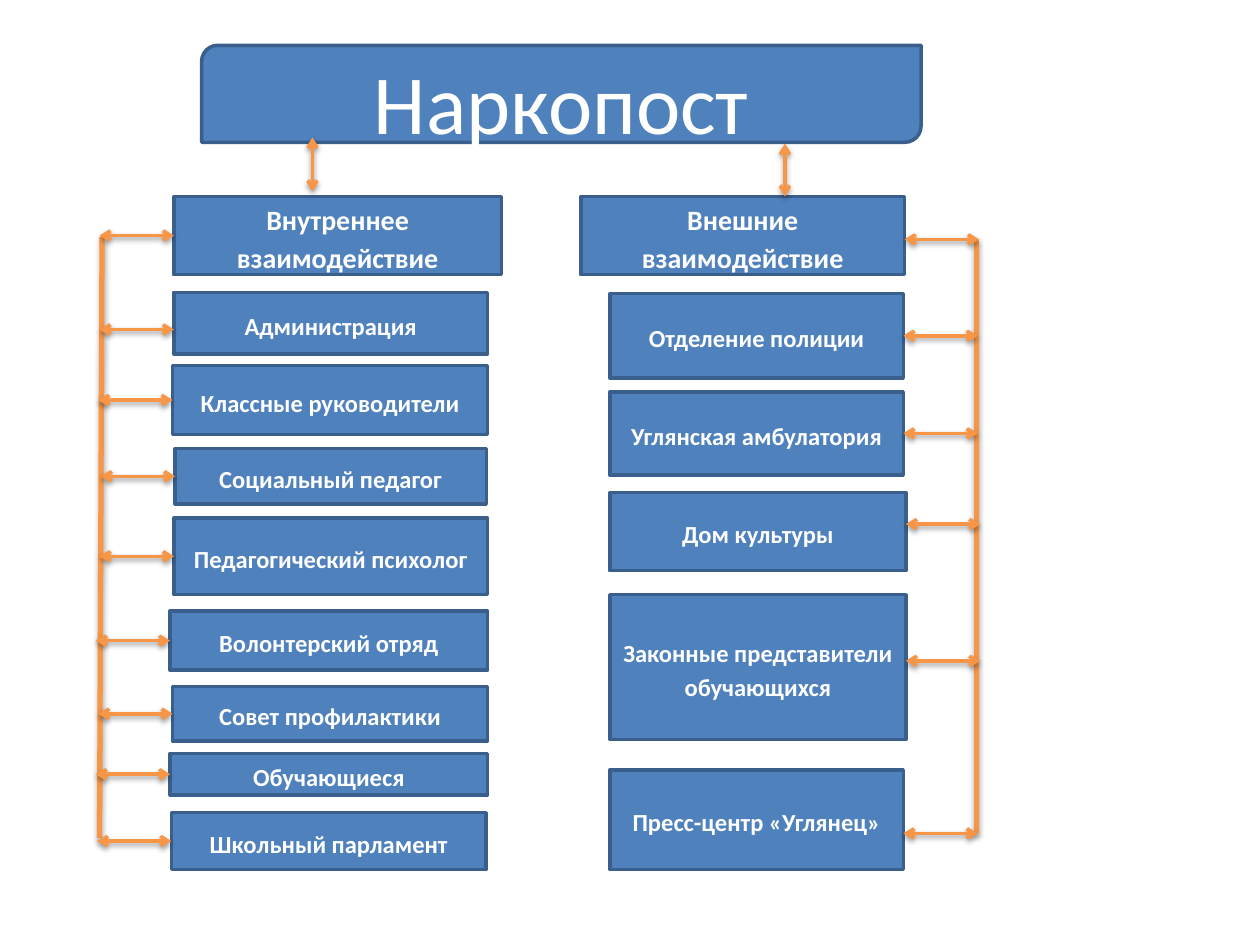
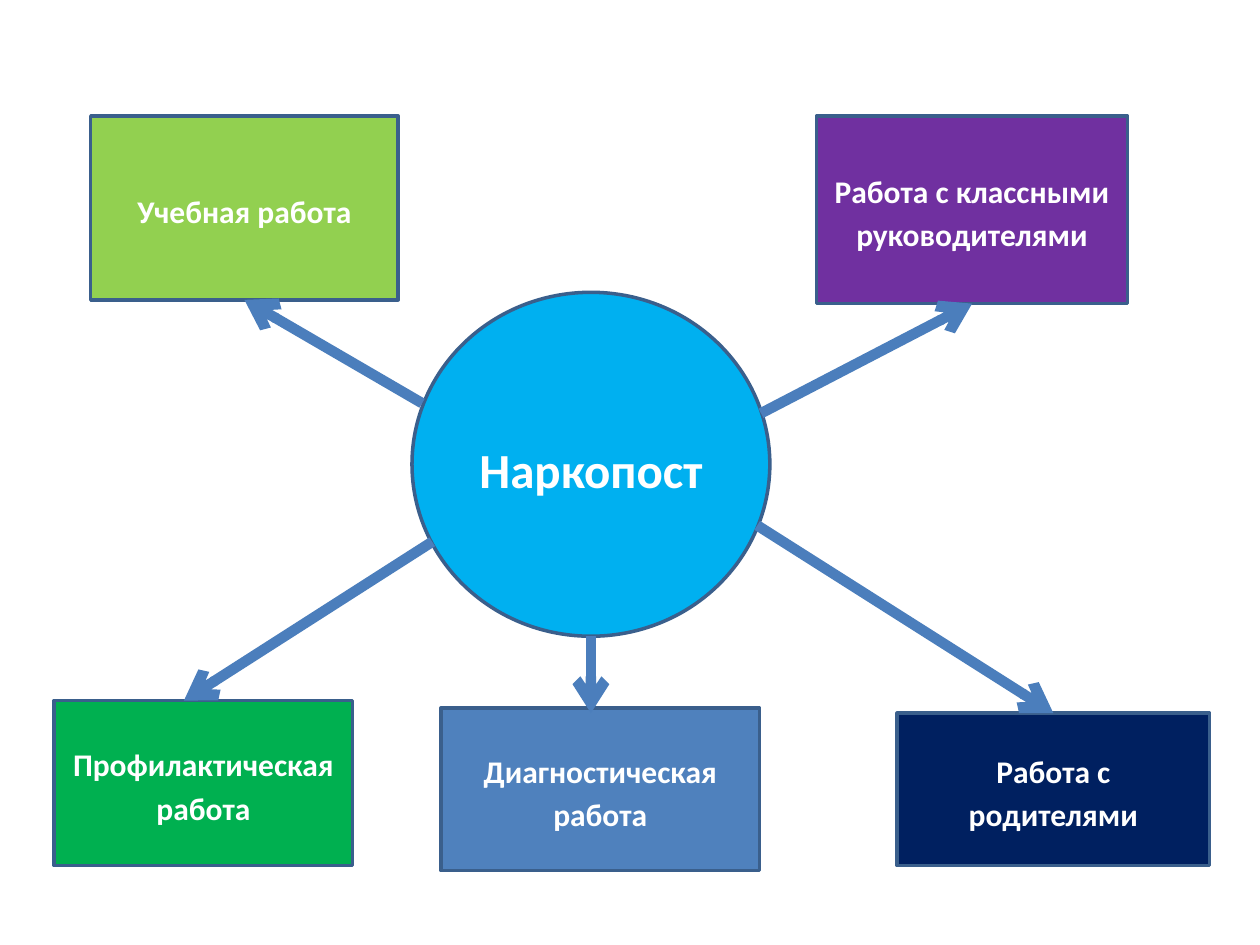
import pptx
import pptx.dml.color
import pptx.enum.shapes
import pptx.enum.text
import pptx.oxml.ns
import pptx.util
from lxml import etree

Inches = pptx.util.Inches
Pt = pptx.util.Pt
SHAPE = pptx.enum.shapes.MSO_SHAPE

COLORS = {
    "blue": "4F81BD", "outline": "3A5F8C", "white": "FFFFFF", "orange": "F79646",
    "arrow": "4B7EBC", "sky": "00B0F0", "lime": "92D050", "green": "00B050",
    "purple": "7030A0", "navy": "002060", "black": "000000",
}
FONT = "Calibri"
TOP, LEFT, BOTTOM, RIGHT = range(4)
ARROW_LENGTH = 0.59

# Each row: text, offset from the column corner (x, y), width, height,
# and how far its arrow sits from the middle of the side.
INTERNAL = [
    ("Внутреннее взаимодействие", 0, 0, 2.6, 0.62, 0),
    ("Администрация", 0, 0.76, 2.49, 0.49, 0.05),
    ("Классные руководители", -0.01, 1.34, 2.5, 0.55, 0),
    ("Социальный педагог", 0.01, 2, 2.47, 0.44, 0),
    ("Педагогический психолог", 0, 2.55, 2.49, 0.61, 0),
    ("Волонтерский отряд", -0.03, 3.29, 2.52, 0.47, 0),
    ("Совет профилактики", -0.01, 3.89, 2.5, 0.43, 0),
    ("Обучающиеся", -0.03, 4.42, 2.52, 0.33, 0),
    ("Школьный парламент", -0.02, 4.89, 2.5, 0.45, 0),
]
EXTERNAL = [
    ("Внешние взаимодействие", 0, 0, 2.57, 0.62, 0.03),
    ("Отделение полиции", 0.23, 0.77, 2.33, 0.67, 0),
    ("Углянская амбулатория", 0.23, 1.55, 2.33, 0.66, 0),
    ("Дом культуры", 0.23, 2.35, 2.35, 0.62, -0.06),
    ("Законные представители обучающихся", 0.23, 3.16, 2.35, 1.15, -0.05),
    ("Пресс-центр «Углянец»", 0.23, 4.55, 2.33, 0.79, 0.11),
]
# Each task: text, fill, box, arrow start, arrow end, side joined at its middle.
TASKS = [
    ("Учебная работа", "lime", (0.72, 0.92, 2.44, 1.46), (3.35, 3.2), (1.94, 2.37), BOTTOM),
    ("Профилактическая работа", "green", (0.43, 5.56, 2.37, 1.31), (3.43, 4.3), (1.46, 5.56), None),
    ("Работа с классными руководителями", "purple", (6.48, 0.92, 2.47, 1.49), (6.04, 3.28), (7.71, 2.4),
     BOTTOM),
    ("Диагностическая работа", "blue", (3.5, 5.62, 2.53, 1.29), (4.69, 5.05), (4.69, 5.66), None),
    ("Работа с родителями", "navy", (7.12, 5.66, 2.48, 1.21), (6.01, 4.17), (8.36, 5.66), TOP),
]


def rgb(name):
    return pptx.dml.color.RGBColor.from_string(COLORS[name])


def write(shape, text, size=14, bold=True, after=10):
    frame = shape.text_frame
    frame.word_wrap = True
    frame.vertical_anchor = pptx.enum.text.MSO_ANCHOR.MIDDLE
    paragraph = frame.paragraphs[0]
    paragraph.alignment = pptx.enum.text.PP_ALIGN.CENTER
    paragraph.line_spacing = 1.15
    paragraph.space_after = Pt(after)
    run = paragraph.add_run()
    run.text = text
    run.font.name = FONT
    run.font.size = Pt(size)
    run.font.bold = bold
    run.font.color.rgb = rgb("white")


def add_block(slide, box, text, kind=SHAPE.RECTANGLE, fill="blue", **text_format):
    block = slide.shapes.add_shape(kind, *map(Inches, box))
    block.shadow.inherit = False
    block.fill.solid()
    block.fill.fore_color.rgb = rgb(fill)
    block.line.color.rgb = rgb("outline")
    block.line.width = Pt(2)
    write(block, text, **text_format)
    return block


def add_child(parent, tag, **attributes):
    return etree.SubElement(parent, pptx.oxml.ns.qn(tag), attributes)


def add_line(slide, start, end, color="orange", width=2, ends=("headEnd", "tailEnd"), shadow=None):
    """Shadow is (opacity in percent, distance in points); None means no shadow."""
    line = slide.shapes.add_connector(
        pptx.enum.shapes.MSO_CONNECTOR.STRAIGHT, *map(Inches, (*start, *end)))
    line.line.color.rgb = rgb(color)
    line.line.width = Pt(width)
    properties = line._element.spPr
    outline = properties.find(pptx.oxml.ns.qn("a:ln"))
    for tip in ends:
        add_child(outline, f"a:{tip}", type="arrow")
    effects = add_child(properties, "a:effectLst")
    if shadow:
        opacity, distance = shadow
        outer = add_child(effects, "a:outerShdw", blurRad=str(Pt(3.1)), dist=str(Pt(distance)),
                          dir="5400000", rotWithShape="0")
        tint = add_child(outer, "a:srgbClr", val=COLORS["black"])
        add_child(tint, "a:alpha", val=str(opacity * 1000))
    return line


def add_double_arrow(slide, start, end):
    return add_line(slide, start, end, shadow=(38, 1.6))


def add_column(slide, corner, rows, side, spine):
    """Stack of blocks, each tied by a double arrow on one side to a vertical spine."""
    blocks = []
    for text, dx, dy, width, height, _ in rows:
        box = (corner[0] + dx, corner[1] + dy, width, height)
        blocks.append(add_block(slide, box, text, size=14 if blocks else 16))
    add_line(slide, *spine, width=3, ends=(), shadow=(35, 1.8))
    for block, (_, dx, dy, width, height, shift) in zip(blocks, rows):
        edge = corner[0] + dx + (width if side == RIGHT else 0)
        far = edge + (ARROW_LENGTH if side == RIGHT else -ARROW_LENGTH)
        y = corner[1] + dy + height / 2 + shift
        arrow = add_double_arrow(slide, (far, y), (edge, y))
        if not shift:
            arrow.end_connect(block, side)


def build_interaction_slide(slide):
    add_block(slide, (1.6, 0.36, 5.71, 0.77), "Наркопост", kind=SHAPE.ROUND_2_DIAG_RECTANGLE,
              size=48, bold=False, after=0)
    add_column(slide, (1.38, 1.56), INTERNAL, LEFT, ((0.81, 1.88), (0.79, 6.65)))
    add_column(slide, (4.61, 1.56), EXTERNAL, RIGHT, ((7.75, 1.9), (7.75, 6.61)))
    add_double_arrow(slide, (2.48, 1.52), (2.48, 1.09))
    add_double_arrow(slide, (6.23, 1.56), (6.23, 1.14))


def build_tasks_slide(slide):
    add_block(slide, (3.27, 2.32, 2.84, 2.73), "Наркопост", kind=SHAPE.OVAL, fill="sky", size=28)
    blocks = [add_block(slide, box, text, fill=fill, size=18) for text, fill, box, *_ in TASKS]
    for block, (*_, start, end, side) in zip(blocks, TASKS):
        arrow = add_line(slide, start, end, color="arrow", width=6, ends=("tailEnd",))
        if side is not None:
            arrow.end_connect(block, side)


def main():
    deck = pptx.Presentation()
    deck.slide_width = Inches(10)
    deck.slide_height = Inches(7.5)
    for build in (build_interaction_slide, build_tasks_slide):
        build(deck.slides.add_slide(deck.slide_layouts[6]))
    deck.save("out.pptx")


if __name__ == "__main__":
    main()
